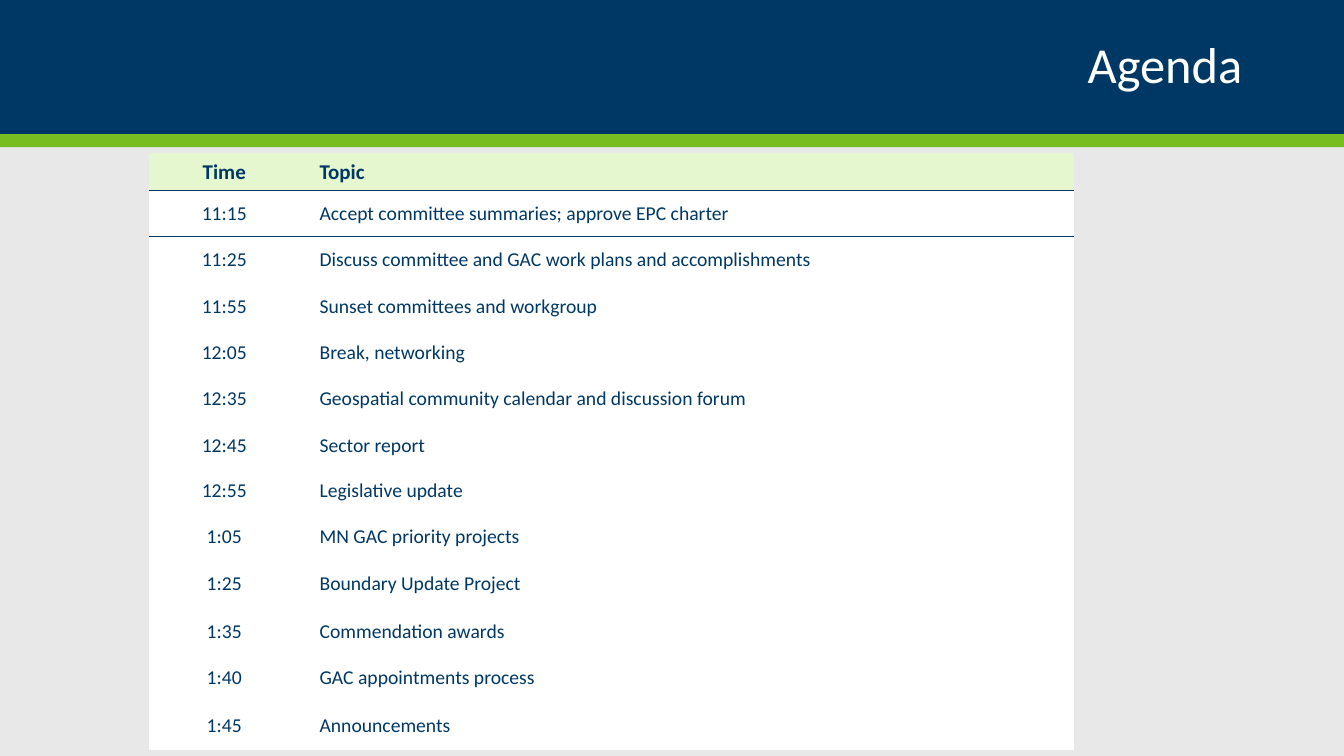
"""Build the agenda slide with its title band and timetable."""
from dataclasses import dataclass

from lxml import etree
from pptx import Presentation, dml, slide as sl, table as tb, util as u
from pptx.dml import color, fill as fl
from pptx.enum import shapes, text
from pptx.oxml import ns
from pptx.text import text as tx

NAVY, GREEN, PALE, WHITE, GRAY = "003865", "78BE21", "E4F7CE", "FFFFFF", "E8E8E8"
PLAIN = "{2D5ABB26-0587-4C30-8999-92F81FD0307C}"
LEFT, MID, RIGHT = text.PP_ALIGN.LEFT, text.PP_ALIGN.CENTER, text.PP_ALIGN.RIGHT


@dataclass
class Band:
    top: float
    height: float
    tint: str


@dataclass
class Row:
    times: list[str]
    topics: list[str]
    height: float = 0.46
    head: bool = False


BANDS = [Band(0, 1.33, NAVY), Band(1.33, 0.13, GREEN)]
ROWS = [
    Row(["Time"], ["Topic"], 0.37, True),
    Row(["11:15"], ["Accept committee summaries; approve EPC charter"]),
    Row(["11:25"], ["Discuss committee and GAC work plans and accomplishments"]),
    Row(["11:55"], ["Sunset committees and workgroup"]),
    Row(["12:05"], ["Break, networking"]),
    Row(["12:35"], ["Geospatial community calendar and discussion forum"]),
    Row(["12:45"], ["Sector report"]),
    Row(["12:55"], ["Legislative update"], 0.39),
    Row(["1:05", "1:25"], ["MN GAC priority projects", "Boundary Update Project"], 0.95),
    Row(["1:35"], ["Commendation awards"]),
    Row(["1:40"], ["GAC appointments process"]),
    Row(["1:45"], ["Announcements"], 0.49),
]


def paint(fill: fl.FillFormat, tint: str) -> None:
    """Fill with one solid colour."""
    fill.solid()
    fill.fore_color.rgb = color.RGBColor.from_string(tint)


def write(frame: tx.TextFrame, lines: list[str], *, size: float, tint: str = NAVY,
          bold: bool = False, align: text.PP_ALIGN = LEFT,
          lead: float = 1, gap: float = 0) -> None:
    """Write one paragraph per line in a single format."""
    frame.word_wrap = True
    for i, line in enumerate(lines):
        para = frame.add_paragraph() if i else frame.paragraphs[0]
        para.alignment, para.line_spacing = align, lead
        para.space_before = u.Pt(gap if i else 0)
        run = para.add_run()
        run.text = line
        font = run.font
        font.name, font.size, font.bold = "Calibri", u.Pt(size), bold
        font.color.rgb = color.RGBColor.from_string(tint)


def rule(cell: tb._Cell, side: str) -> None:
    """Draw a one-point navy border on a side of a cell."""
    props = cell._tc.get_or_add_tcPr()
    line = etree.SubElement(props, ns.qn(f"a:ln{side}"), w=str(u.Pt(1)))
    solid = etree.SubElement(line, ns.qn("a:solidFill"))
    etree.SubElement(solid, ns.qn("a:srgbClr"), val=NAVY)


def draw_band(slide: sl.Slide, band: Band) -> None:
    """Draw a full-width colour band."""
    shape = slide.shapes.add_shape(
        shapes.MSO_SHAPE.RECTANGLE, 0, u.Inches(band.top),
        u.Inches(13.33), u.Inches(band.height))
    shape.shadow.inherit = False
    paint(shape.fill, band.tint)
    shape.line.fill.background()


def draw_cell(cell: tb._Cell, row: Row, lines: list[str], first: bool) -> None:
    """Format and fill one timetable cell."""
    cell.vertical_anchor = text.MSO_ANCHOR.MIDDLE
    cell.margin_left = u.Inches(0.1 if first else 0.2)
    cell.margin_right = u.Inches(0.1)
    cell.margin_top = cell.margin_bottom = u.Inches(0.05 if row.head else 0.1)
    paint(cell.fill, PALE if row.head else WHITE)
    write(cell.text_frame, lines, size=15 if row.head else 14, bold=row.head,
          align=MID if first else LEFT, gap=17)


def draw_table(slide: sl.Slide) -> None:
    """Draw the timetable."""
    total = sum(row.height for row in ROWS)
    frame = slide.shapes.add_table(
        len(ROWS), 2, u.Inches(1.48), u.Inches(1.52), u.Inches(9.17), u.Inches(total))
    grid = frame.table
    grid.first_row = grid.horz_banding = False
    for style in frame.element.iter(ns.qn("a:tableStyleId")):
        style.text = PLAIN
    for col, width in zip(grid.columns, (1.49, 7.68)):
        col.width = u.Inches(width)
    for col in range(2):
        rule(grid.cell(0, col), "B")
        rule(grid.cell(1, col), "T")
    for i, row in enumerate(ROWS):
        grid.rows[i].height = u.Inches(row.height)
        draw_cell(grid.cell(i, 0), row, row.times, True)
        draw_cell(grid.cell(i, 1), row, row.topics, False)


def main() -> None:
    """Build and save the deck."""
    deck = Presentation()
    deck.slide_width, deck.slide_height = u.Inches(13.33), u.Inches(7.5)
    slide = deck.slides.add_slide(deck.slide_layouts[6])
    paint(slide.background.fill, GRAY)
    for band in BANDS:
        draw_band(slide, band)
    title = slide.shapes.add_textbox(
        u.Inches(0.92), u.Inches(0.17), u.Inches(11.5), u.Inches(1)).text_frame
    title.vertical_anchor = text.MSO_ANCHOR.MIDDLE
    write(title, ["Agenda"], size=36, tint=WHITE, align=RIGHT, lead=0.9)
    draw_table(slide)
    deck.save("out.pptx")


if __name__ == "__main__":
    main()
